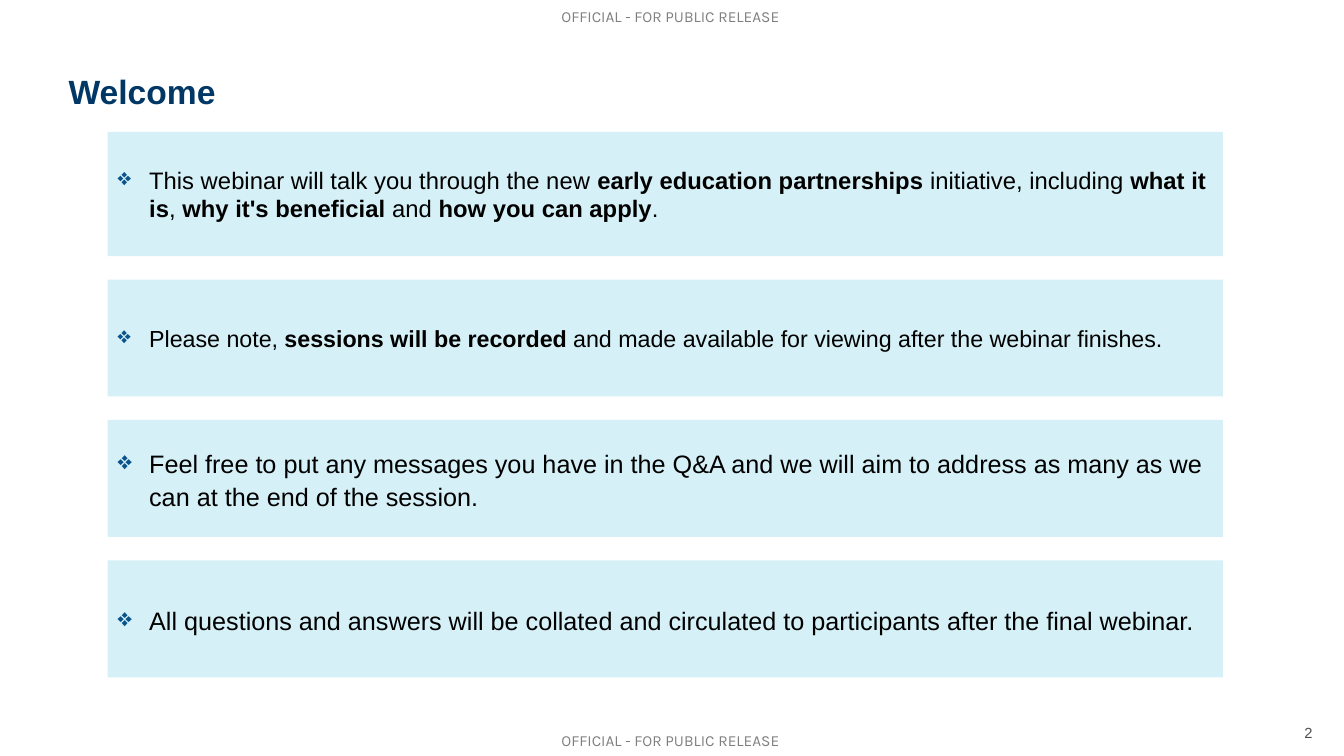
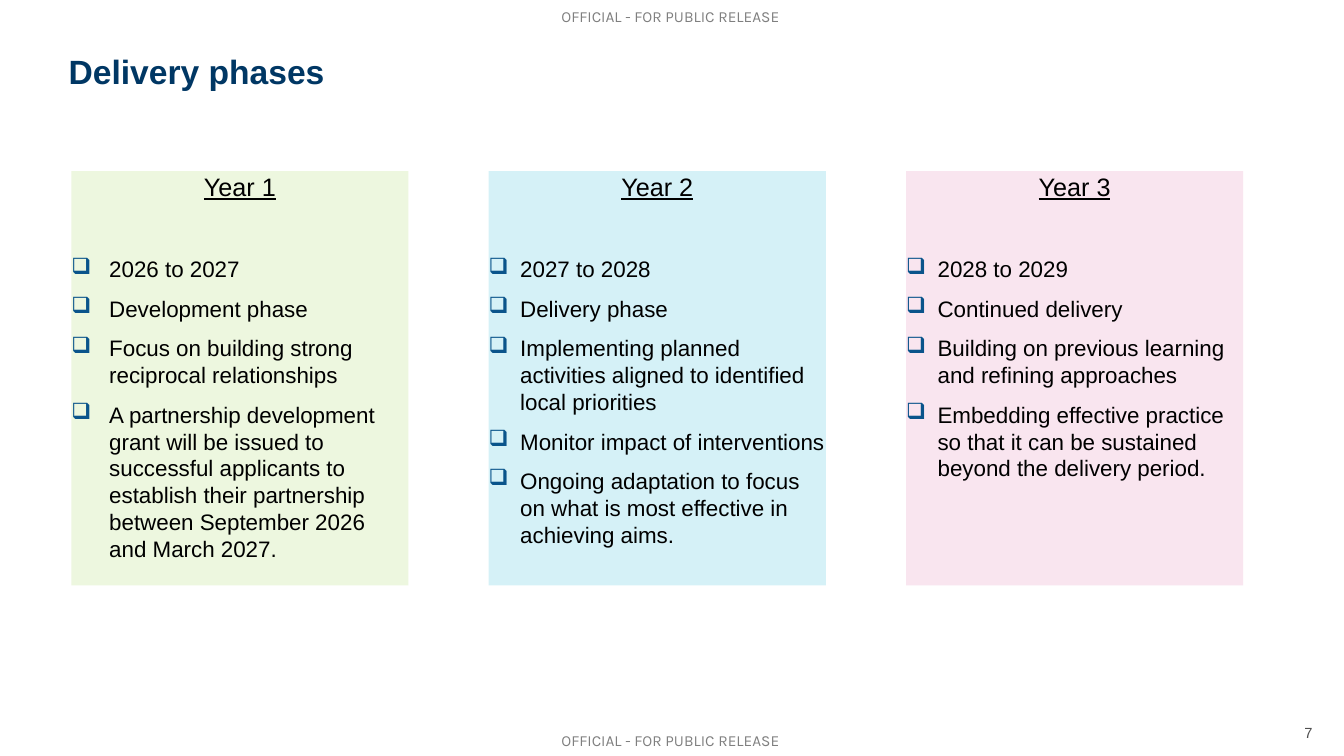
"""Build the webinar welcome and delivery phases slides."""
from lxml import etree
from pptx import Presentation
from pptx.dml.color import RGBColor
from pptx.enum.shapes import MSO_SHAPE
from pptx.enum.text import MSO_ANCHOR, PP_ALIGN
from pptx.oxml.ns import qn
from pptx.util import Pt

RECTANGLE = MSO_SHAPE.RECTANGLE
TOP, MIDDLE, BOTTOM = MSO_ANCHOR.TOP, MSO_ANCHOR.MIDDLE, MSO_ANCHOR.BOTTOM
LEFT, CENTER, RIGHT = PP_ALIGN.LEFT, PP_ALIGN.CENTER, PP_ALIGN.RIGHT

NAVY, BLUE, BLACK, GREY, DARK_GREY = "003764", "0A548B", "000000", "7F7F7F", "4D4D4D"
GREEN_TINT, BLUE_TINT, PINK_TINT = "EDF7DF", "D5F1F7", "F9E5EF"

BANNER = "OFFICIAL - FOR PUBLIC RELEASE"
BANNER_TOPS = (5, 522)
BANNER_FONT = {"size": Pt(11), "name": "Karla"}
TITLE_FONT = {"size": Pt(24), "bold": True}
NUMBER_FONT = {"size": Pt(10.5)}


def add_box(page, left, top, width, height, fill=None, anchor=TOP, inset=(0, 0)):
    """Add a text box, or a rectangle when a fill is given."""
    area = [Pt(value) for value in (left, top, width, height)]
    if fill:
        box = page.shapes.add_shape(RECTANGLE, *area)
        box.shadow.inherit = False
        box.fill.solid()
        box.fill.fore_color.rgb = RGBColor.from_string(fill)
        box.line.fill.background()
    else:
        box = page.shapes.add_textbox(*area)
    frame = box.text_frame
    side, edge = inset
    layout = {
        "word_wrap": True,
        "vertical_anchor": anchor,
        "margin_left": Pt(side),
        "margin_right": Pt(side),
        "margin_top": Pt(edge),
        "margin_bottom": Pt(edge),
    }
    for name, value in layout.items():
        setattr(frame, name, value)
    return frame


def write(para, text, font, color=BLACK, bullet=None, indent=0, **layout):
    """Fill a paragraph; text between asterisks is bold."""
    if bullet:
        properties = para._p.get_or_add_pPr()
        properties.set("marL", str(Pt(indent)))
        properties.set("indent", str(-Pt(indent)))
        bullet_color = etree.SubElement(properties, qn("a:buClr"))
        etree.SubElement(bullet_color, qn("a:srgbClr"), val=BLUE)
        etree.SubElement(properties, qn("a:buChar"), char=bullet)
    for name, value in {"alignment": LEFT, **layout}.items():
        setattr(para, name, value)
    for index, part in enumerate(text.split("*")):
        if part:
            span = para.add_run()
            span.text = part
            span.font.color.rgb = RGBColor.from_string(color)
            for name, value in {"name": "Arial", "bold": index % 2 == 1, **font}.items():
                setattr(span.font, name, value)


deck = Presentation()
deck.slide_width, deck.slide_height = Pt(960), Pt(540)

pages = []
for title, title_top, number in (("Welcome", 54, "2"), ("Delivery phases", 39.6, "7")):
    page = deck.slides.add_slide(deck.slide_layouts[6])
    pages.append(page)
    for top in BANNER_TOPS:
        banner = add_box(page, 401, top, 160, 13)
        write(banner.paragraphs[0], BANNER, BANNER_FONT, GREY)
    heading = add_box(page, 49, title_top, 862.6, 40.3)
    write(heading.paragraphs[0], title, TITLE_FONT, NAVY, line_spacing=0.9)
    corner = add_box(page, 885.6, 504.7, 59, 28.8, anchor=BOTTOM, inset=(7.2, 3.6))
    write(corner.paragraphs[0], number, NUMBER_FONT, DARK_GREY, alignment=RIGHT)
welcome, phases = pages

messages = [
    ("This webinar will talk you through the new *early education partnerships* initiative, "
     "including *what it is*, *why it's beneficial* and *how you can apply*.", 17, 1.0, 88.6),
    ("Please note, *sessions will be recorded* and made available for viewing "
     "after the webinar finishes.", 16.6, 1.0, 83.5),
    ("Feel free to put any messages you have in the Q&A and we will aim to address "
     "as many as we can at the end of the session.", 18, 1.1, 83.5),
    ("All questions and answers will be collated and circulated to participants "
     "after the final webinar.", 18, 1.1, 83.5),
]
message_gap = 16.8
top = 94.3
for text, size, spacing, height in messages:
    frame = add_box(welcome, 77, top, 796.6, height, BLUE_TINT, MIDDLE, (7.2, 3.6))
    write(frame.paragraphs[0], text, {"size": Pt(size)}, bullet="❖", indent=22.5,
          line_spacing=spacing)
    top += height + message_gap

years = [
    ("Year 1", GREEN_TINT, 27, [
        "2026 to 2027",
        "Development phase",
        "Focus on building strong reciprocal relationships",
        "A partnership development grant will be issued to successful applicants "
        "to establish their partnership between September 2026 and March 2027.",
    ]),
    ("Year 2", BLUE_TINT, 22.5, [
        "2027 to 2028",
        "Delivery phase",
        "Implementing planned activities aligned to identified local priorities",
        "Monitor impact of interventions",
        "Ongoing adaptation to focus on what is most effective in achieving aims.",
    ]),
    ("Year 3", PINK_TINT, 22.5, [
        "2028 to 2029",
        "Continued delivery",
        "Building on previous learning and refining approaches",
        "Embedding effective practice so that it can be sustained beyond the delivery period.",
    ]),
]
for column, (year, tint, indent, points) in enumerate(years):
    frame = add_box(phases, 51 + 298.1 * column, 122.2, 240.8, 296, tint)
    write(frame.paragraphs[0], year, {"size": Pt(18), "underline": True},
          alignment=CENTER, space_after=Pt(38.7))
    for point in points:
        write(frame.add_paragraph(), point, {"size": Pt(16)}, bullet="❑", indent=indent,
              space_after=Pt(9))

deck.save("out.pptx")
